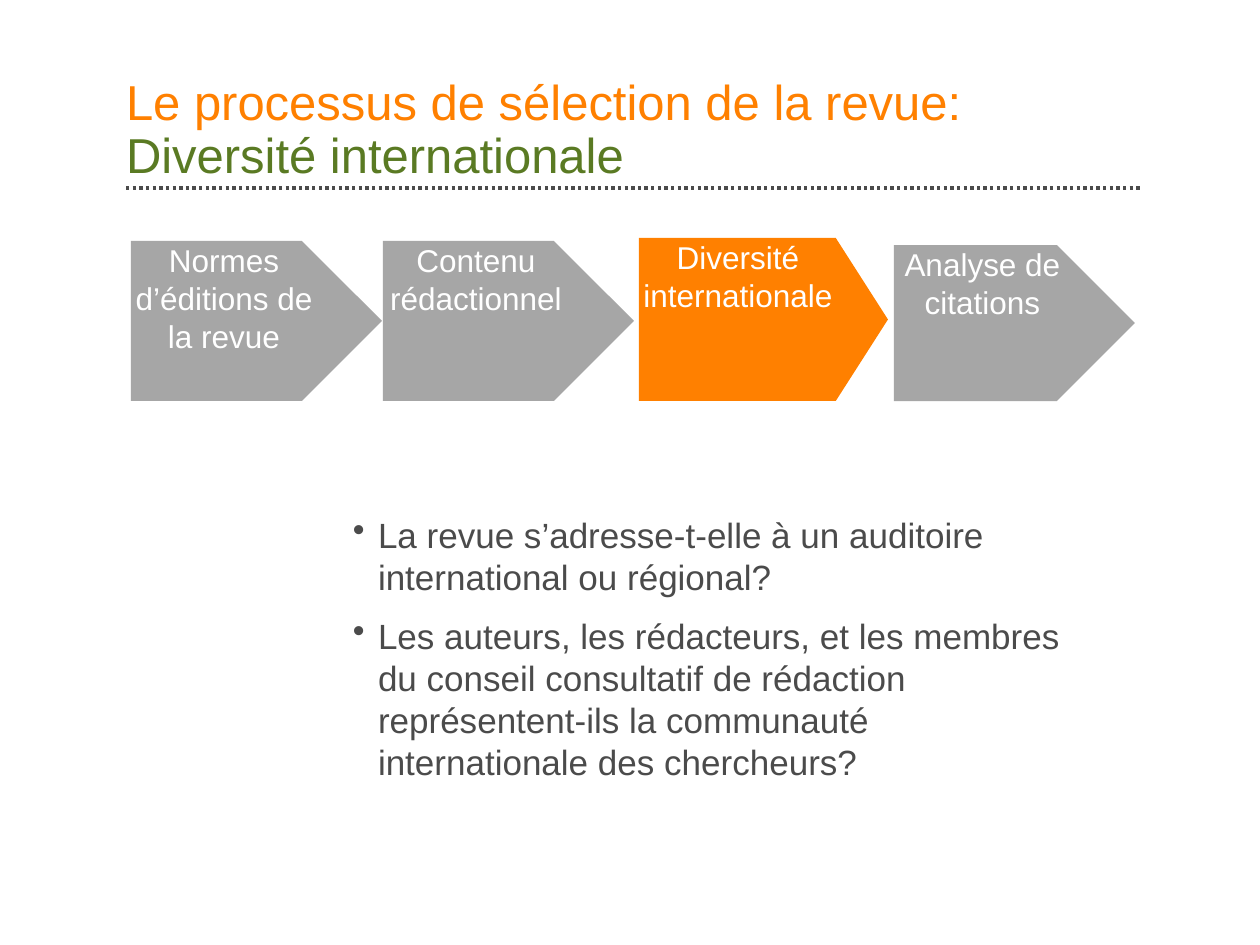
from pptx import Presentation
from pptx.dml.color import RGBColor
from pptx.enum.dml import MSO_LINE
from pptx.enum.shapes import MSO_CONNECTOR, MSO_SHAPE
from pptx.enum.text import MSO_ANCHOR, PP_ALIGN
from pptx.oxml.ns import qn
from pptx.util import Inches, Pt
from lxml.etree import SubElement

PX_PER_INCH = 126
ORANGE = RGBColor(0xFF, 0x80, 0x00)
GREEN = RGBColor(0x5A, 0x7A, 0x23)
GRAY = RGBColor(0xA6, 0xA6, 0xA6)
DARK = RGBColor(0x4B, 0x4B, 0x4B)
WHITE = RGBColor(0xFF, 0xFF, 0xFF)

# label, (left, top, width, height), depth of the point, fill
STEPS = [
    ("Normes d’éditions de la revue", (131, 241, 251, 160), 0.5, GRAY),
    ("Contenu rédactionnel", (383, 241, 251, 160), 0.5, GRAY),
    ("Diversité internationale", (639, 238, 249, 163), 0.32, ORANGE),
    ("Analyse de citations", (894, 245, 241, 156), 0.5, GRAY),
]
QUESTIONS = [
    "La revue s’adresse-t-elle à un auditoire international ou régional?",
    "Les auteurs, les rédacteurs, et les membres du conseil consultatif de "
    "rédaction représentent-ils la communauté internationale des chercheurs?",
]


def px(length):
    return Inches(length / PX_PER_INCH)


class SlideBuilder:
    font_name = "Arial"

    def __init__(self, slide):
        self.slide = slide

    def style(self, font, size, color):
        font.name = self.font_name
        font.size = Pt(size)
        font.color.rgb = color

    def set_frame(self, frame, anchor, insets):
        frame.word_wrap = True
        frame.vertical_anchor = anchor
        (frame.margin_left, frame.margin_top,
         frame.margin_right, frame.margin_bottom) = map(px, insets)

    def text_frame(self, box, anchor, insets):
        frame = self.slide.shapes.add_textbox(*map(px, box)).text_frame
        self.set_frame(frame, anchor, insets)
        return frame

    def title(self, box, lines, colors):
        frame = self.text_frame(box, MSO_ANCHOR.BOTTOM, (0, 0, 0, 0))
        heading = frame.paragraphs[0]
        heading.text = "\v".join(lines)
        heading.line_spacing = 0.9
        self.style(heading.font, 28, colors[0])
        for run, color in zip(heading.runs, colors):
            self.style(run.font, 28, color)

    def dotted_rule(self, left, right, y):
        rule = self.slide.shapes.add_connector(
            MSO_CONNECTOR.STRAIGHT, px(left), px(y), px(right), px(y))
        rule.line.color.rgb = DARK
        rule.line.width = Pt(1.9)
        rule.line.dash_style = MSO_LINE.ROUND_DOT
        SubElement(rule._element.spPr, qn("a:effectLst"))

    def step(self, label, box, point, fill):
        arrow = self.slide.shapes.add_shape(MSO_SHAPE.PENTAGON, *map(px, box))
        arrow.adjustments[0] = point
        arrow.shadow.inherit = False
        arrow.fill.solid()
        arrow.fill.fore_color.rgb = fill
        arrow.line.fill.background()
        frame = arrow.text_frame
        self.set_frame(frame, MSO_ANCHOR.TOP, (0, 0, 25, 0))
        frame.text = label
        paragraph = frame.paragraphs[0]
        paragraph.alignment = PP_ALIGN.CENTER
        self.style(paragraph.runs[0].font, 18, WHITE)

    def bullets(self, box, items):
        frame = self.text_frame(box, MSO_ANCHOR.TOP, (13, 6, 13, 6))
        frame.text = "\n".join(items)
        for index, paragraph in enumerate(frame.paragraphs):
            properties = paragraph._p.get_or_add_pPr()
            properties.set("marL", str(px(25)))
            properties.set("indent", str(-px(25)))
            SubElement(properties, qn("a:buChar"), char="•")
            if index:
                paragraph.space_before = Pt(10)
            self.style(paragraph.runs[0].font, 20, DARK)


def main():
    deck = Presentation()
    deck.slide_width, deck.slide_height = Inches(10), Inches(7.5)
    builder = SlideBuilder(deck.slides.add_slide(deck.slide_layouts[6]))
    builder.dotted_rule(126, 1141, 188)
    builder.title((126, 69, 1015, 115),
                  ["Le processus de sélection de la revue:",
                   "Diversité internationale"], [ORANGE, GREEN])
    for step in STEPS:
        builder.step(*step)
    builder.bullets((340, 507, 737, 246), QUESTIONS)
    deck.save("out.pptx")


if __name__ == "__main__":
    main()
